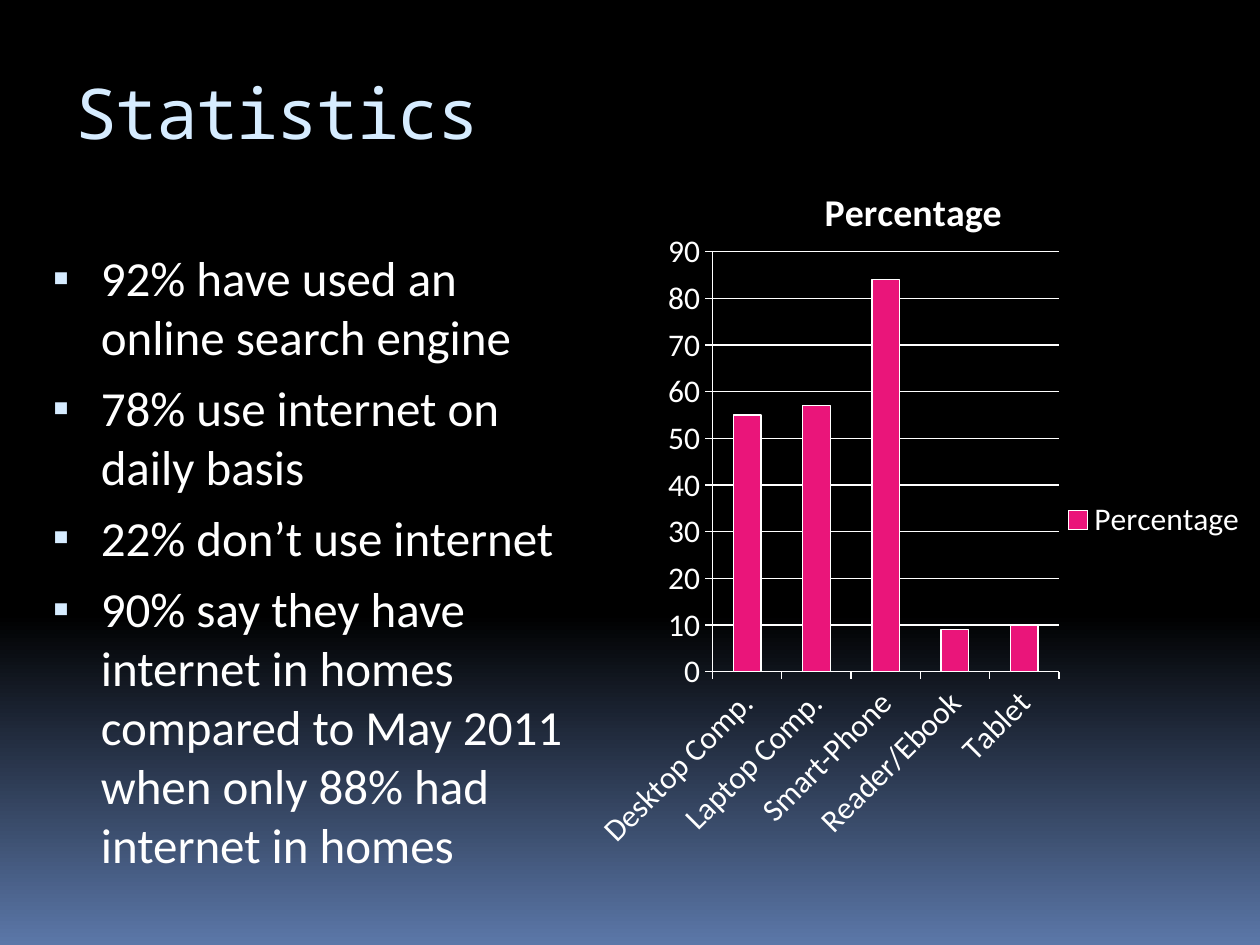
from copy import deepcopy

from lxml import etree
from pptx import Presentation
from pptx.chart.data import CategoryChartData
from pptx.dml.color import RGBColor
from pptx.enum.chart import XL_CHART_TYPE, XL_LEGEND_POSITION, XL_TICK_MARK
from pptx.enum.text import MSO_ANCHOR, MSO_AUTO_SIZE, PP_ALIGN
from pptx.oxml.ns import qn
from pptx.util import Pt

COLUMN_CLUSTERED = XL_CHART_TYPE.COLUMN_CLUSTERED
LEGEND_RIGHT = XL_LEGEND_POSITION.RIGHT
TICK_OUTSIDE = XL_TICK_MARK.OUTSIDE
ANCHOR_TOP = MSO_ANCHOR.TOP
NO_AUTOFIT = MSO_AUTO_SIZE.NONE
LEFT = PP_ALIGN.LEFT

WHITE = "FFFFFF"
PALE_BLUE = "D6ECFF"
PINK = "EA157A"
BODY_FONT = "Calibri"

FINDINGS = [
    "92% have used an online search engine",
    "78% use internet on daily basis",
    "22% don’t use internet",
    "90% say they have internet in homes compared to May 2011 "
    "when only 88% had internet in homes",
]
DEVICE_PERCENTAGES = {
    "Desktop Comp.": 55,
    "Laptop Comp.": 57,
    "Smart-Phone": 84,
    "Reader/Ebook": 9,
    "Tablet": 10,
}


def color(hex_string):
    return RGBColor.from_string(hex_string)


def style_font(font, name, size, hex_string, bold=False):
    font.name = name
    font.size = Pt(size)
    font.bold = bold
    font.color.rgb = color(hex_string)


def style_line(line, hex_string):
    line.color.rgb = color(hex_string)
    line.width = Pt(0.75)


def place(shape, left, top, width, height):
    shape.left, shape.top = Pt(left), Pt(top)
    shape.width, shape.height = Pt(width), Pt(height)


def set_background(slide):
    """Black down to 65 %, then fading to blue at the bottom edge."""
    fill = slide.background.fill
    fill.gradient()
    fill.gradient_angle = 270
    first, last = fill.gradient_stops
    first.color.rgb = color("000000")
    first.position = 0
    last.color.rgb = color("5B77A8")
    last.position = 1
    stops = slide.element.find(".//" + qn("a:gsLst"))
    middle = deepcopy(stops[0])
    middle.set("pos", "65000")
    stops.insert(1, middle)


def add_title(slide, text):
    title = slide.shapes.title
    place(title, 36, 40, 648, 72)
    frame = title.text_frame
    frame.auto_size = NO_AUTOFIT
    frame.vertical_anchor = ANCHOR_TOP
    frame.margin_top = 0
    frame.text = text
    paragraph = frame.paragraphs[0]
    paragraph.alignment = LEFT
    style_font(paragraph.font, "Noto Sans Mono", 40, PALE_BLUE)
    paragraph.runs[0].font._element.set("spc", "-100")


def add_square_bullet(paragraph):
    properties = paragraph._p.get_or_add_pPr()
    properties.set("marL", str(Pt(32.4)))
    properties.set("indent", str(-Pt(27.4)))
    bullet_color = etree.Element(qn("a:buClr"))
    etree.SubElement(bullet_color, qn("a:srgbClr"), val=PALE_BLUE)
    bullet_parts = [
        bullet_color,
        etree.Element(qn("a:buSzPct"), val="95000"),
        etree.Element(qn("a:buFont"), typeface=BODY_FONT),
        etree.Element(qn("a:buChar"), char="▪"),
    ]
    default_run = properties.find(qn("a:defRPr"))
    for part in bullet_parts:
        default_run.addprevious(part)


def add_bullet_list(slide, items):
    body = slide.placeholders[1]
    place(body, 18, 138, 318, 356)
    frame = body.text_frame
    frame.auto_size = NO_AUTOFIT
    frame.vertical_anchor = ANCHOR_TOP
    frame.text = "\n".join(items)
    for paragraph in frame.paragraphs:
        paragraph.alignment = LEFT
        paragraph.space_before = Pt(7)
        style_font(paragraph.font, BODY_FONT, 28, WHITE)
        add_square_bullet(paragraph)


def set_plot_layout(chart, x, y, w, h):
    """Fix the inner plot area, in fractions of the chart."""
    plot_area = chart._chartSpace.chart.plotArea
    for old_layout in plot_area.findall(qn("c:layout")):
        plot_area.remove(old_layout)
    layout = etree.Element(qn("c:layout"))
    manual = etree.SubElement(layout, qn("c:manualLayout"))
    settings = {"layoutTarget": "inner", "xMode": "edge", "yMode": "edge",
                "x": x, "y": y, "w": w, "h": h}
    for name, value in settings.items():
        etree.SubElement(manual, qn(f"c:{name}"), val=str(value))
    plot_area.insert(0, layout)


def style_axes(chart):
    for axis in (chart.category_axis, chart.value_axis):
        axis.major_tick_mark = TICK_OUTSIDE
        style_line(axis.format.line, WHITE)
        style_font(axis.tick_labels.font, BODY_FONT, 18, WHITE)
    labels = chart.category_axis._element.find(qn("c:txPr"))
    labels.find(qn("a:bodyPr")).set("rot", "-2700000")
    value_axis = chart.value_axis
    value_axis.minimum_scale, value_axis.maximum_scale = 0, 90
    value_axis.major_unit = 10
    style_line(value_axis.major_gridlines.format.line, WHITE)


def add_column_chart(slide, name, values):
    data = CategoryChartData()
    data.categories = list(values)
    data.add_series(name, list(values.values()))
    chart = slide.shapes.add_chart(
        COLUMN_CLUSTERED, Pt(324), Pt(90), Pt(396), Pt(414), data).chart
    style_font(chart.font, BODY_FONT, 18, WHITE)

    chart.has_title = True
    title_frame = chart.chart_title.text_frame
    title_frame.text = name
    style_font(title_frame.paragraphs[0].font, BODY_FONT, 21.6, WHITE, bold=True)
    chart.chart_title.include_in_layout = False

    chart.has_legend = True
    chart.legend.position = LEGEND_RIGHT
    chart.legend.include_in_layout = False
    style_font(chart.legend.font, BODY_FONT, 18, WHITE)

    plot = chart.plots[0]
    plot.vary_by_categories = False
    plot.gap_width = 150
    columns = plot.series[0].format
    columns.fill.solid()
    columns.fill.fore_color.rgb = color(PINK)
    style_line(columns.line, WHITE)

    style_axes(chart)
    set_plot_layout(chart, 0.21, 0.13, 0.5, 0.58)


def main():
    presentation = Presentation()
    presentation.slide_width, presentation.slide_height = Pt(720), Pt(540)
    slide = presentation.slides.add_slide(presentation.slide_layouts[1])
    set_background(slide)
    add_title(slide, "Statistics")
    add_bullet_list(slide, FINDINGS)
    add_column_chart(slide, "Percentage", DEVICE_PERCENTAGES)
    presentation.save("out.pptx")


if __name__ == "__main__":
    main()
